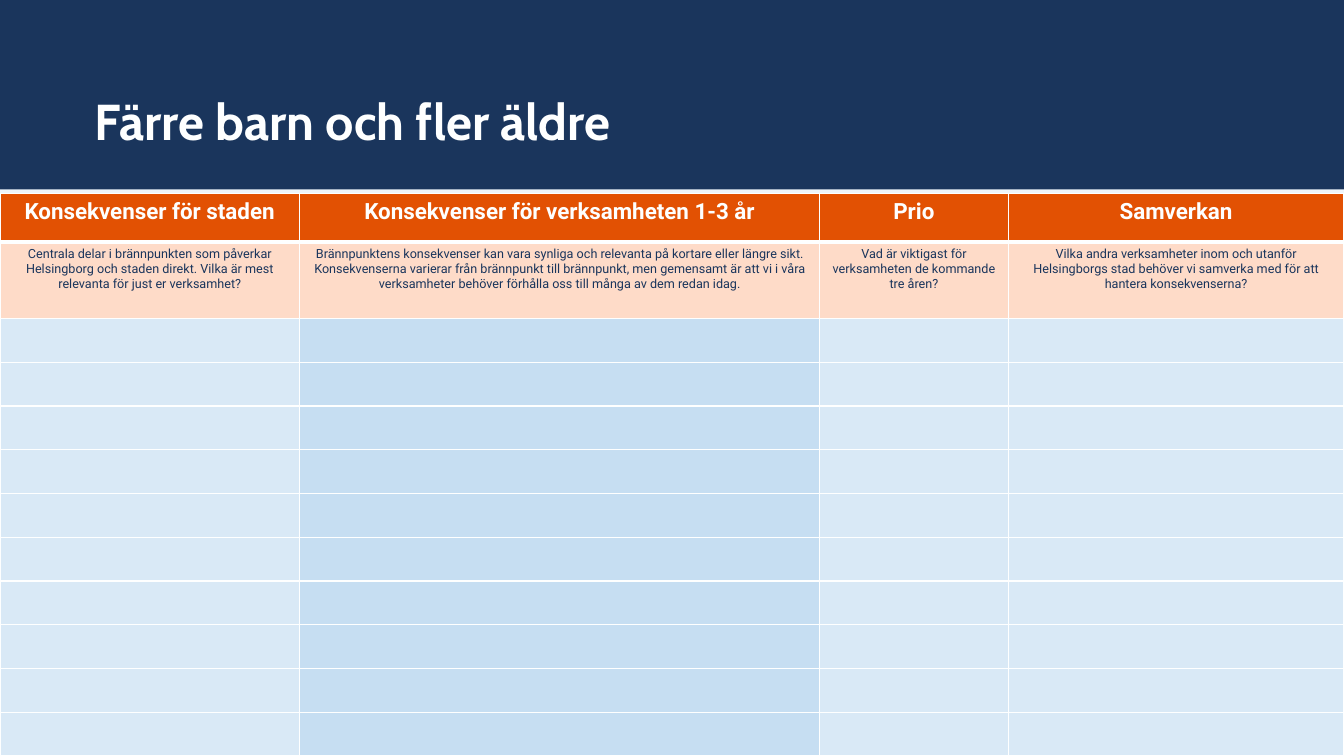
from dataclasses import dataclass

from lxml import etree
from pptx import Presentation
from pptx.dml.color import RGBColor
from pptx.enum.shapes import MSO_SHAPE
from pptx.enum.text import MSO_ANCHOR, PP_ALIGN
from pptx.oxml.ns import qn
from pptx.util import Inches, Pt

RECT = MSO_SHAPE.RECTANGLE
BOTTOM = MSO_ANCHOR.BOTTOM
LEFT, CENTER = PP_ALIGN.LEFT, PP_ALIGN.CENTER


@dataclass(frozen=True)
class Theme:
    navy: str = "1A355C"
    white: str = "FEFFFF"
    orange: str = "E25103"
    peach: str = "FEDBC8"
    blue: str = "C6DEF2"
    page: str = "EEF5FB"
    title_font: str = "Cabin"
    body_font: str = "Roboto"
    title_size: int = 36
    heading_size: int = 16
    hint_size: int = 9
    thin: int = 1
    thick: int = 3


@dataclass(frozen=True)
class Column:
    heading: str
    hint: str
    width: float
    alpha: int = 50  # opacity of the empty cells, in percent


THEME = Theme()
SLIDE_W, SLIDE_H = 13.33, 7.5
BAND_H, TABLE_TOP = 1.88, 1.92
HEADING_H, HINT_H = 0.48, 0.76
EMPTY_ROWS = 10
EMPTY_H = (SLIDE_H - TABLE_TOP - HEADING_H - HINT_H) / EMPTY_ROWS

COLUMNS = [
    Column("Konsekvenser för staden",
           "Centrala delar i brännpunkten som påverkar Helsingborg och staden "
           "direkt. Vilka är mest relevanta för just er verksamhet?", 2.97),
    Column("Konsekvenser för verksamheten 1-3 år",
           "Brännpunktens konsekvenser kan vara synliga och relevanta på kortare "
           "eller längre sikt. Konsekvenserna varierar från brännpunkt till "
           "brännpunkt, men gemensamt är att vi i våra verksamheter behöver "
           "förhålla oss till många av dem redan idag.", 5.16, alpha=100),
    Column("Prio",
           "Vad är viktigast för verksamheten de kommande tre åren?", 1.87),
    Column("Samverkan",
           "Vilka andra verksamheter inom och utanför Helsingborgs stad behöver "
           "vi samverka med för att hantera konsekvenserna?", 3.33),
]

TITLE_FORMAT = dict(name=THEME.title_font, size=Pt(THEME.title_size), bold=True)
HEADING_FORMAT = dict(name=THEME.body_font, size=Pt(THEME.heading_size), bold=True)
HINT_FORMAT = dict(name=THEME.body_font, size=Pt(THEME.hint_size), bold=False)


def write(tf, text: str, font_format: dict, color: str, align=CENTER) -> None:
    p = tf.paragraphs[0]
    p.alignment = align
    r = p.add_run()
    r.text = text
    for name, value in font_format.items():
        setattr(r.font, name, value)
    r.font.color.rgb = RGBColor.from_string(color)


def paint(fill, color: str, alpha: int = 100) -> None:
    fill.solid()
    fill.fore_color.rgb = RGBColor.from_string(color)
    if alpha < 100:
        rgb = fill.fore_color._xFill.find(qn("a:srgbClr"))
        etree.SubElement(rgb, qn("a:alpha"), val=str(alpha * 1000))


def set_borders(cell, top: int, bottom: int) -> None:
    """Draw the cell's four edges; borders come before the fill in the XML."""
    widths = dict(lnL=THEME.thin, lnR=THEME.thin, lnT=top, lnB=bottom)
    tc_pr = cell._tc.get_or_add_tcPr()
    for i, (edge, width) in enumerate(widths.items()):
        ln = etree.Element(qn(f"a:{edge}"), w=str(Pt(width)))
        solid = etree.SubElement(ln, qn("a:solidFill"))
        etree.SubElement(solid, qn("a:srgbClr"), val=THEME.white)
        tc_pr.insert(i, ln)


def add_header(s) -> None:
    band = s.shapes.add_shape(RECT, 0, 0, Inches(SLIDE_W), Inches(BAND_H))
    band.shadow.inherit = False
    paint(band.fill, THEME.navy)
    band.line.fill.background()

    title = s.shapes.add_textbox(Inches(0.94), Inches(0.24), Inches(10), Inches(1.26))
    tf = title.text_frame
    settings = dict(word_wrap=True, vertical_anchor=BOTTOM, margin_left=0,
                    margin_right=0, margin_top=0, margin_bottom=0)
    for name, value in settings.items():
        setattr(tf, name, value)
    write(tf, "Färre barn och fler äldre", TITLE_FORMAT, THEME.white, LEFT)
    tf.paragraphs[0].line_spacing = 0.9


def add_worksheet(s) -> None:
    heights = [HEADING_H, HINT_H] + [EMPTY_H] * EMPTY_ROWS
    table = s.shapes.add_table(len(heights), len(COLUMNS), 0, Inches(TABLE_TOP),
                               Inches(SLIDE_W), Inches(sum(heights))).table
    for row, height in zip(table.rows, heights):
        row.height = Inches(height)

    for c, column in enumerate(COLUMNS):
        table.columns[c].width = Inches(column.width)
        for r in range(len(heights)):
            cell = table.cell(r, c)
            if r == 0:
                paint(cell.fill, THEME.orange)
                write(cell.text_frame, column.heading, HEADING_FORMAT, THEME.white)
            elif r == 1:
                paint(cell.fill, THEME.peach)
                write(cell.text_frame, column.hint, HINT_FORMAT, THEME.navy)
            else:
                paint(cell.fill, THEME.blue, column.alpha)
            set_borders(cell, top=THEME.thick if r == 1 else THEME.thin,
                        bottom=THEME.thick if r == 0 else THEME.thin)


def main() -> None:
    prs = Presentation()
    prs.slide_width, prs.slide_height = Inches(SLIDE_W), Inches(SLIDE_H)
    s = prs.slides.add_slide(prs.slide_layouts[6])
    paint(s.background.fill, THEME.page)
    add_header(s)
    add_worksheet(s)
    prs.save("out.pptx")


if __name__ == "__main__":
    main()
